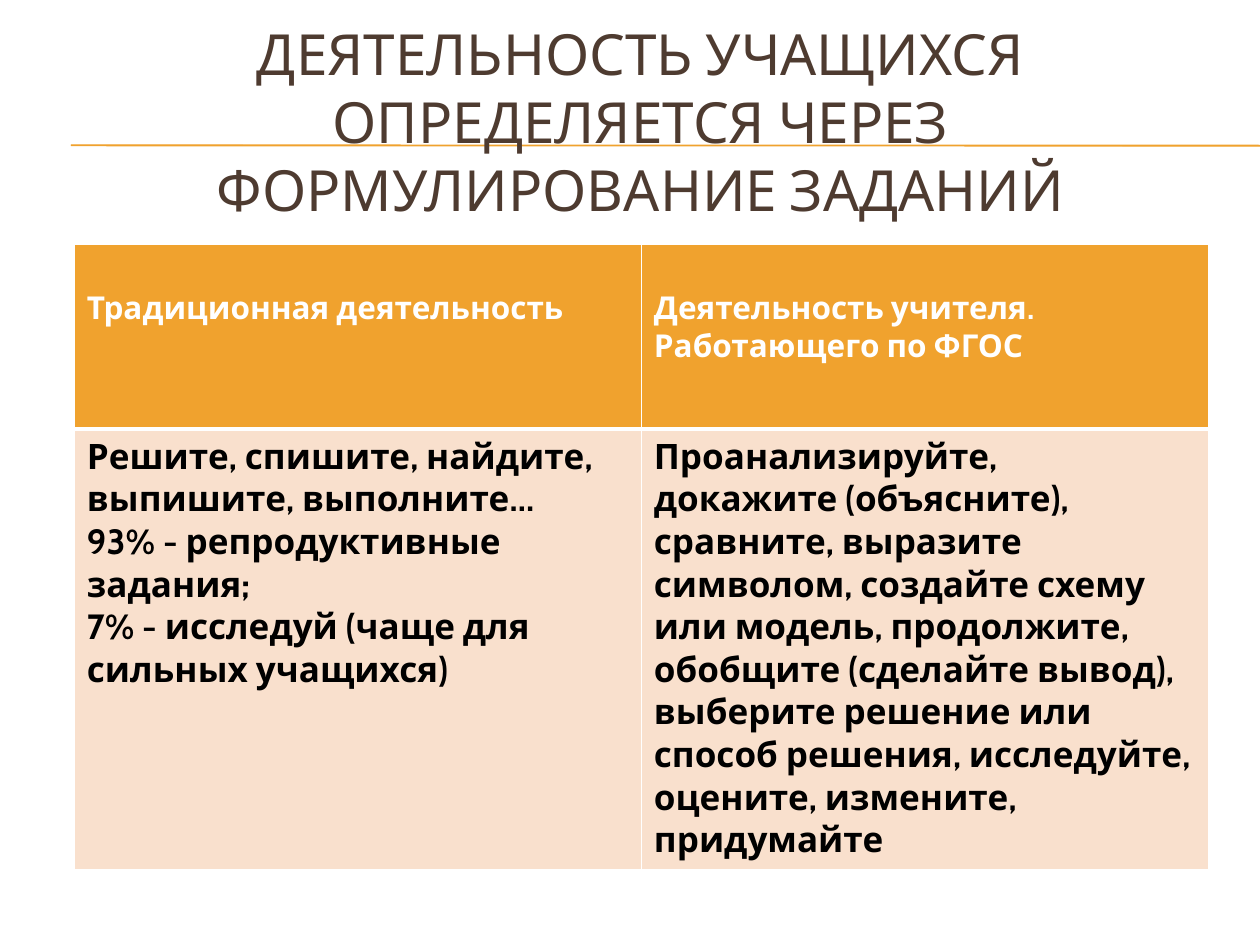
"""Build a slide comparing traditional and standards-based classroom tasks."""
from lxml import etree
from pptx import Presentation
from pptx.dml.color import RGBColor
from pptx.enum.shapes import MSO_CONNECTOR
from pptx.enum.text import MSO_ANCHOR, PP_ALIGN
from pptx.oxml.ns import qn
from pptx.util import Pt

STRAIGHT = MSO_CONNECTOR.STRAIGHT
MIDDLE = MSO_ANCHOR.MIDDLE
CENTER = PP_ALIGN.CENTER
FONT = "Cabin"
ORANGE = "F0A22E"
PEACH = "F9E0CD"
WHITE = "FFFFFF"
BLACK = "000000"
BROWN = "4E3B30"


def color(value):
    return RGBColor.from_string(value)


def format_text(text_frame, size, font_color, bold):
    for paragraph in text_frame.paragraphs:
        for run in paragraph.runs:
            run.font.name = FONT
            run.font.size = Pt(size)
            run.font.bold = bold
            run.font.color.rgb = color(font_color)


presentation = Presentation()
presentation.slide_width = Pt(720)
presentation.slide_height = Pt(540)
slide = presentation.slides.add_slide(presentation.slide_layouts[6])

for line_top in (82.9, 83.2):
    line = slide.shapes.add_connector(
        STRAIGHT, Pt(40.5), Pt(line_top), Pt(720), Pt(line_top + 0.2))
    line.line.color.rgb = color(ORANGE)
    line.line.width = Pt(0.75)
    etree.SubElement(line._element.spPr, qn("a:effectLst"))

title = slide.shapes.add_textbox(Pt(24), Pt(36), Pt(684), Pt(66))
title_frame = title.text_frame
title_frame.word_wrap = True
title_frame.vertical_anchor = MIDDLE
title_frame.text = "ДЕЯТЕЛЬНОСТЬ УЧАЩИХСЯ ОПРЕДЕЛЯЕТСЯ ЧЕРЕЗ ФОРМУЛИРОВАНИЕ ЗАДАНИЙ"
title_frame.paragraphs[0].alignment = CENTER
format_text(title_frame, 32.4, BROWN, False)

rows = [
    ["Традиционная деятельность",
     "Деятельность учителя. Работающего по ФГОС"],
    ["Решите, спишите, найдите, выпишите, выполните…\n"
     "93% - репродуктивные задания;\n"
     "7% - исследуй (чаще для сильных учащихся)",
     "Проанализируйте,\vдокажите (объясните), сравните, выразите символом, "
     "создайте схему или модель, продолжите, обобщите (сделайте вывод), "
     "выберите решение или способ решения, исследуйте, оцените, измените, "
     "придумайте"],
]
row_styles = [
    {"height": 105.4, "fill": ORANGE, "size": 18, "color": WHITE,
     "margin_top": 25.4, "borders": {"L": 1, "R": 1, "T": 1, "B": 3}},
    {"height": 252, "fill": PEACH, "size": 20, "color": BLACK,
     "margin_top": 3.6, "borders": {"L": 1, "R": 1, "T": 3, "B": 1}},
]
table = slide.shapes.add_table(2, 2, Pt(42.5), Pt(139.7), Pt(648), Pt(357.4)).table
for row_index, (texts, style) in enumerate(zip(rows, row_styles)):
    table.rows[row_index].height = Pt(style["height"])
    for column_index, text in enumerate(texts):
        cell = table.cell(row_index, column_index)
        cell.text_frame.text = text
        cell.margin_top = Pt(style["margin_top"])
        format_text(cell.text_frame, style["size"], style["color"], True)
        properties = cell._tc.get_or_add_tcPr()
        for side, width in style["borders"].items():
            border = etree.SubElement(properties, qn(f"a:ln{side}"), w=str(Pt(width)))
            border_fill = etree.SubElement(border, qn("a:solidFill"))
            etree.SubElement(border_fill, qn("a:srgbClr"), val=WHITE)
        cell.fill.solid()
        cell.fill.fore_color.rgb = color(style["fill"])

presentation.save("out.pptx")
